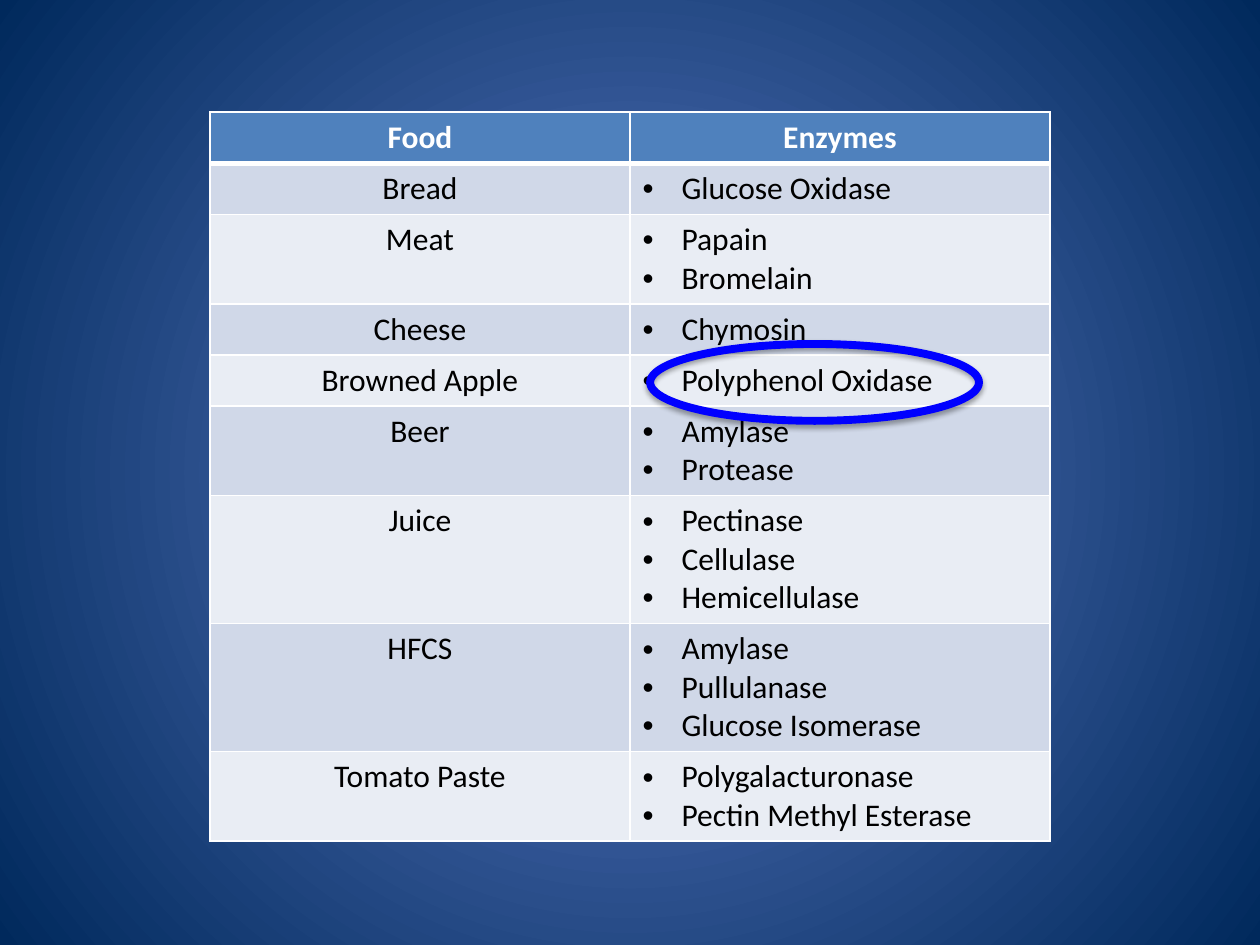
from pptx import Presentation
from pptx.dml.color import RGBColor as RGB
from pptx.enum.shapes import MSO_SHAPE as Shape
from pptx.enum.text import MSO_ANCHOR as Anchor, PP_ALIGN as Align
from pptx.oxml import parse_xml
from pptx.util import Inches, Pt

# Content
HEAD = ("Food", "Enzymes")
FOODS = [
    ("Bread", ["Glucose Oxidase"]),
    ("Meat", ["Papain", "Bromelain"]),
    ("Cheese", ["Chymosin"]),
    ("Browned Apple", ["Polyphenol Oxidase"]),
    ("Beer", ["Amylase", "Protease"]),
    ("Juice", ["Pectinase", "Cellulase", "Hemicellulase"]),
    ("HFCS", ["Amylase", "Pullulanase", "Glucose Isomerase"]),
    ("Tomato Paste", ["Polygalacturonase", "Pectin Methyl Esterase"]),
]

# Format
WIDE, HIGH = 10, 7.5
LEFT, TOP, SPAN = WIDE / 6, 0.89, WIDE * 2 / 3
PAD, LINE = 0.1, 0.3
BANDS = ("D0D8E8", "E9EDF4")
HEAD_FONT = {"size": Pt(18), "name": "Calibri", "bold": True}
BODY_FONT = {**HEAD_FONT, "bold": False}
NS = 'xmlns:a="http://schemas.openxmlformats.org/drawingml/2006/main"'
PNS = 'xmlns:p="http://schemas.openxmlformats.org/presentationml/2006/main"'


def color(text):
    return RGB.from_string(text)


def solid(text):
    return f'<a:solidFill><a:srgbClr val="{text}"/></a:solidFill>'


def write(cell, lines, font, ink, bullet=False):
    frame = cell.text_frame
    frame.text = "\n".join(lines)
    for para in frame.paragraphs:
        for key, val in font.items():
            setattr(para.runs[0].font, key, val)
        para.runs[0].font.color.rgb = color(ink)
        if bullet:
            props = para._p.get_or_add_pPr()
            props.set("marL", str(Inches(0.31)))
            props.set("indent", str(-Inches(0.31)))
            props.append(parse_xml(f'<a:buFont {NS} typeface="Arial"/>'))
            props.append(parse_xml(f'<a:buChar {NS} char="•"/>'))
        else:
            para.alignment = Align.CENTER
    cell.vertical_anchor = Anchor.MIDDLE if bullet else Anchor.TOP


def dress(cell, fill, top, foot):
    props = cell._tc.get_or_add_tcPr()
    for side, size in (("L", 1), ("R", 1), ("T", top), ("B", foot)):
        props.append(parse_xml(
            f'<a:ln{side} {NS} w="{Pt(size)}">{solid("FFFFFF")}</a:ln{side}>'))
    cell.fill.solid()
    cell.fill.fore_color.rgb = color(fill)


deck = Presentation()
deck.slide_width, deck.slide_height = Inches(WIDE), Inches(HIGH)
slide = deck.slides.add_slide(deck.slide_layouts[6])

# Radial background
slide._element.cSld.insert(0, parse_xml(
    f'<p:bg {PNS} {NS}><p:bgPr><a:gradFill rotWithShape="1"><a:gsLst>'
    '<a:gs pos="0"><a:srgbClr val="5E7CC5"/></a:gs>'
    '<a:gs pos="100000"><a:srgbClr val="00295C"/></a:gs></a:gsLst>'
    '<a:path path="circle">'
    '<a:fillToRect l="50000" t="50000" r="50000" b="50000"/></a:path>'
    '</a:gradFill><a:effectLst/></p:bgPr></p:bg>'))

# Table: each row is as high as its list of enzymes
tall = [PAD + LINE] + [PAD + LINE * len(names) for _, names in FOODS]
table = slide.shapes.add_table(
    len(tall), 2, Inches(LEFT), Inches(TOP), Inches(SPAN),
    Inches(sum(tall))).table
for row, size in zip(table.rows, tall):
    row.height = Inches(size)

for col, text in enumerate(HEAD):
    write(table.cell(0, col), [text], HEAD_FONT, "FFFFFF")
    dress(table.cell(0, col), "4F81BD", 1, 3)
for num, (food, names) in enumerate(FOODS, 1):
    write(table.cell(num, 0), [food], BODY_FONT, "000000")
    write(table.cell(num, 1), names, BODY_FONT, "000000", bullet=True)
    for cell in table.rows[num].cells:
        dress(cell, BANDS[(num - 1) % 2], 3 if num == 1 else 1, 1)

# Ring around the browning enzyme
ring = slide.shapes.add_shape(
    Shape.OVAL, *map(Inches, (5.16, 2.73, 2.61, 0.61)))
ring.fill.background()
ring.line.color.rgb = color("0000FF")
ring.line.width = Pt(4.5)
ring._element.spPr.append(parse_xml(
    f'<a:effectLst {NS}><a:outerShdw blurRad="{Pt(3.1)}" dist="{Pt(1.8)}" '
    'dir="5400000" rotWithShape="0"><a:srgbClr val="000000">'
    '<a:alpha val="35000"/></a:srgbClr></a:outerShdw></a:effectLst>'))

deck.save("out.pptx")
